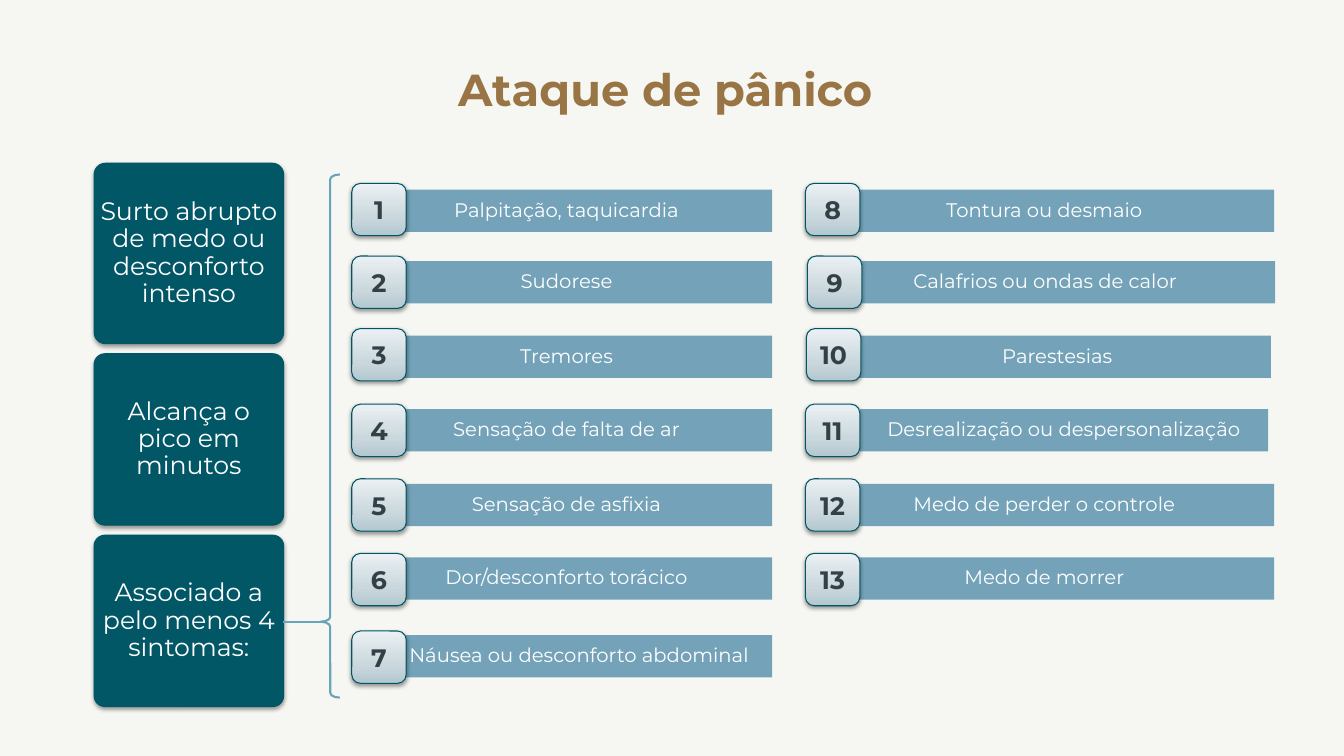
from lxml.etree import SubElement
from pptx import Presentation
from pptx.dml.color import RGBColor
from pptx.enum.shapes import MSO_CONNECTOR, MSO_SHAPE
from pptx.enum.text import MSO_ANCHOR, PP_ALIGN
from pptx.oxml.ns import qn
from pptx.util import Pt

FONT = "Montserrat"
TEAL, EDGE, BLUE, BRACE = "025766", "005666", "4988A7", "6AA4B9"
BADGE_STOPS = [(0, "B3C7D0"), (35, "CAD8DD"), (100, "EBF0F3")]
BADGE_W, BADGE_H, BAR_H = 38.9, 37.4, 30.2

# Top of the bar and of the badge in each row
ROWS = [(135.4, 131), (186.5, 182.9), (239.8, 234.7), (292.3, 288.7),
        (345.6, 342), (398.2, 395.3), (453.6, 450.7)]

CARDS = [  # text, top, height
    ("Surto abrupto de medo ou desconforto intenso", 116.6, 128.9),
    ("Alcança o pico em minutos", 252.7, 122.4),
    ("Associado a pelo menos 4 sintomas:", 382.3, 122.4),
]
LEFT_SYMPTOMS = [  # text, bar left, bar width, badge left
    ("Palpitação, taquicardia", 257.8, 293.8, 251.3),
    ("Sudorese", 257.8, 293.8, 251.3),
    ("Tremores", 257.8, 293.8, 251.3),
    ("Sensação de falta de ar", 257.8, 293.8, 251.3),
    ("Sensação de asfixia", 257.8, 293.8, 251.3),
    ("Dor/desconforto torácico", 257.8, 293.8, 251.3),
    ("Náusea ou desconforto abdominal", 275.8, 275.8, 251.3),
]
RIGHT_SYMPTOMS = [
    ("Tontura ou desmaio", 581.8, 328.3, 575.3),
    ("Calafrios ou ondas de calor", 582.5, 328.3, 576.7),
    ("Parestesias", 602.6, 305.3, 576),
    ("Desrealização ou despersonalização", 614.2, 291.6, 575.3),
    ("Medo de perder o controle", 581.8, 328.3, 575.3),
    ("Medo de morrer", 581.8, 328.3, 575.3),
]


def rgb(color):
    return RGBColor.from_string(color)


def add_text(sp, text, size, color, bold=False, spacing=0.9, inset=0.9, wrap=True):
    tf = sp.text_frame
    tf.word_wrap = wrap
    tf.vertical_anchor = MSO_ANCHOR.MIDDLE
    tf.margin_left = tf.margin_right = tf.margin_top = tf.margin_bottom = Pt(inset)
    p = tf.paragraphs[0]
    p.alignment = PP_ALIGN.CENTER
    p.line_spacing = spacing
    r = p.add_run()
    r.text = text
    r.font.name, r.font.size, r.font.bold = FONT, Pt(size), bold
    r.font.color.rgb = rgb(color)


def add_box(s, kind, left, top, width, height, fill=None, line=None, weight=0.75):
    sp = s.shapes.add_shape(kind, Pt(left), Pt(top), Pt(width), Pt(height))
    sp.shadow.inherit = False
    if fill:
        sp.fill.solid()
        sp.fill.fore_color.rgb = rgb(fill)
    else:
        sp.fill.background()
    if line:
        sp.line.color.rgb = rgb(line)
        sp.line.width = Pt(weight)
    else:
        sp.line.fill.background()
    return sp


def add_shadow(sp):
    effects = sp._element.spPr.find(qn("a:effectLst"))
    shadow = SubElement(effects, qn("a:outerShdw"), blurRad=str(Pt(3.1)),
                        dist=str(Pt(1.6)), dir="5400000", rotWithShape="0")
    color = SubElement(shadow, qn("a:srgbClr"), val="000000")
    SubElement(color, qn("a:alpha"), val="38000")


def set_gradient(sp, stops):
    sp.fill.gradient()
    sp.fill.gradient_angle = 90
    gs_list = sp._element.spPr.find(qn("a:gradFill")).find(qn("a:gsLst"))
    for gs in list(gs_list):
        gs_list.remove(gs)
    for pos, color in stops:
        gs = SubElement(gs_list, qn("a:gs"), pos=str(pos * 1000))
        SubElement(gs, qn("a:srgbClr"), val=color)


def add_title(s, left, top, width, height):
    sp = s.shapes.add_textbox(Pt(left), Pt(top), Pt(width), Pt(height))
    add_text(sp, "Ataque de pânico", 32, "997545", bold=True, inset=0)


def add_cards(s, left, width):
    for text, top, height in CARDS:
        sp = add_box(s, MSO_SHAPE.ROUNDED_RECTANGLE, left, top, width, height, TEAL, EDGE)
        sp.adjustments[0] = 0.063
        add_shadow(sp)
        add_text(sp, text, 18, "FFFFFF")


def add_brace(s, left, top, width, height, stem):
    sp = add_box(s, MSO_SHAPE.LEFT_BRACE, left, top, width, height, None, BRACE, 1.5)
    sp.adjustments[0], sp.adjustments[1] = 0.253, 0.855
    # Stem from the brace tip back to the last card
    y = Pt(top + height * 0.855)
    cx = s.shapes.add_connector(MSO_CONNECTOR.STRAIGHT, Pt(left), y, Pt(left - stem), y)
    cx.line.color.rgb = rgb(BRACE)
    cx.line.width = Pt(1.5)
    SubElement(cx._element.spPr, qn("a:effectLst"))


def add_symptoms(s, symptoms, first):
    rows = zip(symptoms, ROWS)
    for number, ((text, left, width, badge_left), (top, badge_top)) in enumerate(rows, first):
        # Translucent bar
        bar = add_box(s, MSO_SHAPE.RECTANGLE, left, top, width, BAR_H, BLUE)
        color = bar._element.spPr.find(qn("a:solidFill")).find(qn("a:srgbClr"))
        SubElement(color, qn("a:alpha"), val="75000")
        add_text(bar, text, 14, "FFFFFF")
        # Numbered badge
        badge = add_box(s, MSO_SHAPE.ROUNDED_RECTANGLE, badge_left, badge_top,
                        BADGE_W, BADGE_H, TEAL, EDGE)
        set_gradient(badge, BADGE_STOPS)
        add_shadow(badge)
        add_text(badge, str(number), 18, "334147", bold=True, spacing=1.0, wrap=False)


def main():
    prs = Presentation()
    prs.slide_width, prs.slide_height = Pt(960), Pt(540)
    s = prs.slides.add_slide(prs.slide_layouts[6])
    s.background.fill.solid()
    s.background.fill.fore_color.rgb = rgb("F6F7F2")

    add_title(s, 99.4, 35.3, 751.7, 61.2)
    add_cards(s, 67.2, 135.4)
    add_brace(s, 229, 124.6, 13.7, 373.7, stem=26.6)
    add_symptoms(s, LEFT_SYMPTOMS, 1)
    add_symptoms(s, RIGHT_SYMPTOMS, len(LEFT_SYMPTOMS) + 1)
    prs.save("out.pptx")


if __name__ == "__main__":
    main()
